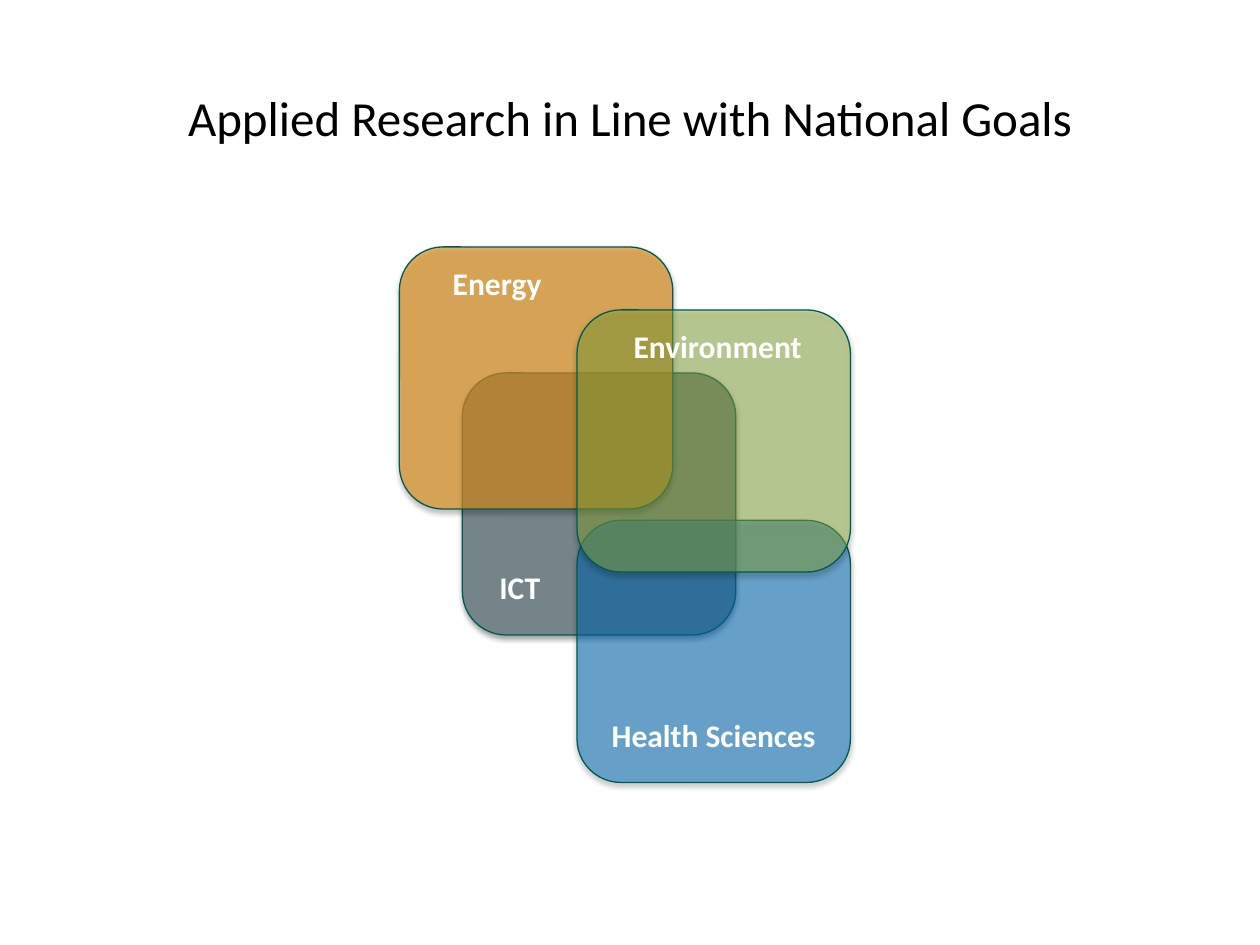
from lxml import etree
from pptx import Presentation
from pptx.dml.color import RGBColor
from pptx.enum.shapes import MSO_SHAPE
from pptx.enum.text import MSO_ANCHOR, PP_ALIGN
from pptx.oxml.ns import qn
from pptx.util import Inches, Pt

ROUNDED = MSO_SHAPE.ROUNDED_RECTANGLE
CENTER = PP_ALIGN.CENTER
MIDDLE, TOP = MSO_ANCHOR.MIDDLE, MSO_ANCHOR.TOP

FONT = "Calibri"
BLACK = RGBColor(0x00, 0x00, 0x00)
WHITE = RGBColor(0xFF, 0xFF, 0xFF)
OUTLINE = RGBColor(0x00, 0x5A, 0x51)
GREY = RGBColor(0x75, 0x84, 0x89)
ORANGE = RGBColor(0xDF, 0x92, 0x21)
BLUE = RGBColor(0x00, 0x70, 0xC0)
GREEN = RGBColor(0x90, 0xB1, 0x3D)

CARD_W, CARD_H = 2.17, 2.08
LABEL_H = 0.4

# Offsets inside the diagram, back to front: left, top, fill, opacity %
CARDS = [
    (0.75, 1.0, GREY, 100),
    (0.25, 0, ORANGE, 67),
    (1.66, 2.17, BLUE, 51),
    (1.66, 0.5, GREEN, 46),
]
# Label text, left, top, width; ICT lies beneath the upper cards
ICT_LABEL = ("ICT", 0.58, 2.5, 1.25)
TOP_LABELS = [
    ("Energy", 0, 0.09, 2.05),
    ("Environment", 1.75, 0.59, 2.05),
    ("Health Sciences", 1.66, 3.67, CARD_W),
]


def add_text(slide, text, left, top, width, height, size, color,
             bold=False, anchor=TOP):
    tb = slide.shapes.add_textbox(Inches(left), Inches(top),
                                  Inches(width), Inches(height))
    tf = tb.text_frame
    tf.word_wrap = True
    tf.vertical_anchor = anchor
    p = tf.paragraphs[0]
    p.alignment = CENTER
    r = p.add_run()
    r.text = text
    r.font.name = FONT
    r.font.size = Pt(size)
    r.font.bold = bold
    r.font.color.rgb = color


def set_opacity(color_el, percent):
    etree.SubElement(color_el, qn("a:alpha")).set("val", str(percent * 1000))


def add_soft_shadow(sp):
    sp.shadow.inherit = False
    effects = sp._element.spPr.find(qn("a:effectLst"))
    shadow = etree.SubElement(
        effects, qn("a:outerShdw"), blurRad=str(Pt(3.1)), dist=str(Pt(1.8)),
        dir="5400000", rotWithShape="0")
    color = etree.SubElement(shadow, qn("a:srgbClr"), val=str(BLACK))
    set_opacity(color, 35)


def add_card(slide, left, top, fill, opacity):
    sp = slide.shapes.add_shape(ROUNDED, Inches(left), Inches(top),
                                Inches(CARD_W), Inches(CARD_H))
    sp.fill.solid()
    sp.fill.fore_color.rgb = fill
    if opacity < 100:
        solid = sp._element.spPr.find(qn("a:solidFill"))
        set_opacity(solid[0], opacity)
    sp.line.color.rgb = OUTLINE
    sp.line.width = Pt(0.75)
    add_soft_shadow(sp)


def add_title(slide, left, top, width, height):
    add_text(slide, "Applied Research in Line with National Goals",
             left, top, width, height, 28, BLACK, anchor=MIDDLE)


def add_diagram(slide, left, top):
    def place_label(text, dx, dy, width):
        add_text(slide, text, left + dx, top + dy, width, LABEL_H,
                 18, WHITE, bold=True)

    for i, (dx, dy, fill, opacity) in enumerate(CARDS):
        add_card(slide, left + dx, top + dy, fill, opacity)
        if i == 0:
            place_label(*ICT_LABEL)
    for label in TOP_LABELS:
        place_label(*label)


def main():
    prs = Presentation()
    prs.slide_width, prs.slide_height = Inches(10), Inches(7.5)
    slide = prs.slides.add_slide(prs.slide_layouts[6])
    # Overlapping research areas
    add_diagram(slide, 2.92, 1.96)
    # Heading
    add_title(slide, 0.5, 0.3, 9, 1.25)
    prs.save("out.pptx")


if __name__ == "__main__":
    main()
